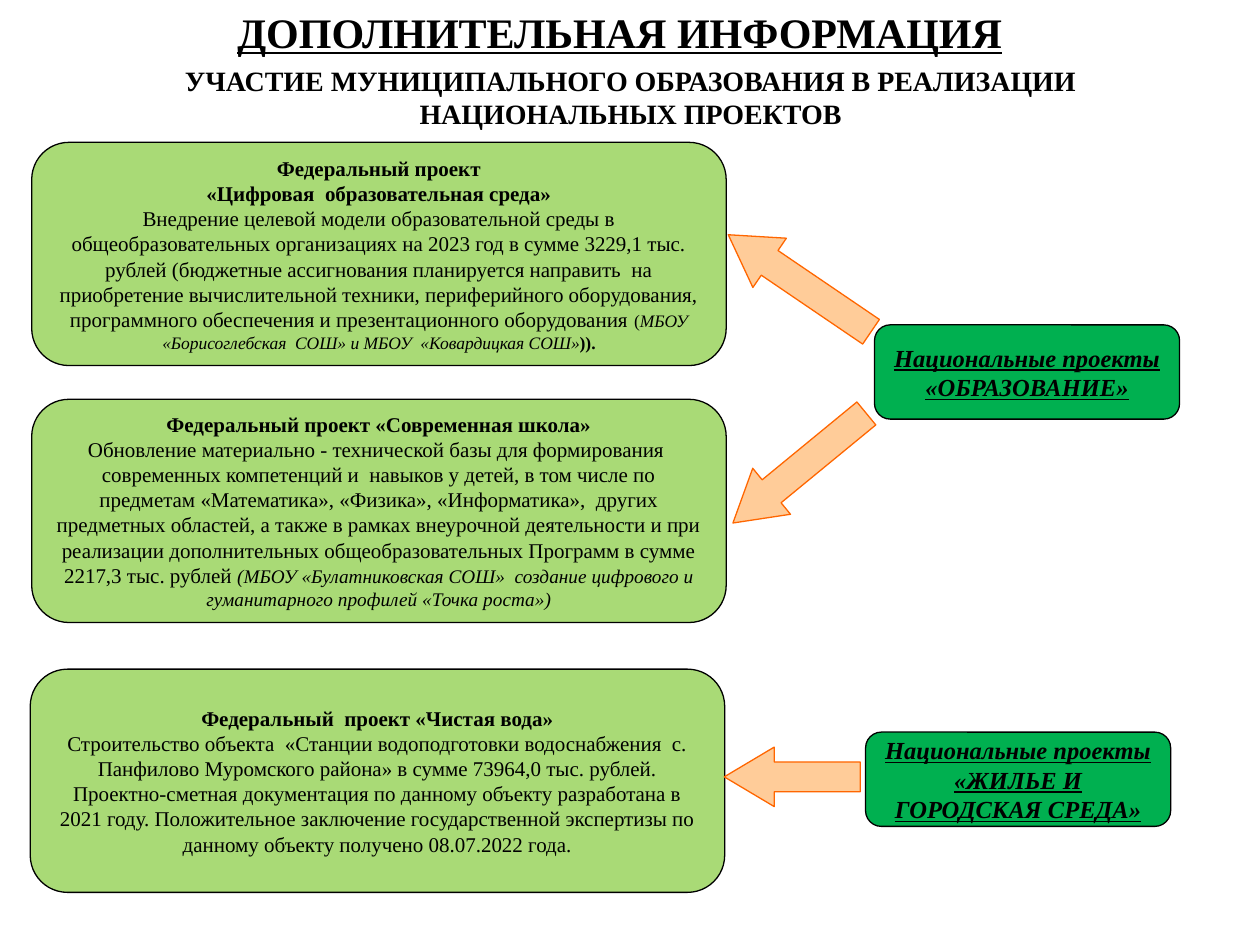
from lxml.etree import SubElement
from pptx import Presentation
from pptx.dml.color import RGBColor
from pptx.enum.shapes import MSO_SHAPE as Shape
from pptx.enum.text import MSO_ANCHOR as Anchor, MSO_AUTO_SIZE as AutoSize, PP_ALIGN as Align
from pptx.oxml.ns import qn
from pptx.util import Cm, Pt

FONT = "Times New Roman"

FEDERAL_PROJECTS = [
    (0.64, 2.87, [
        [("Федеральный проект", {"bold": True})],
        [("«Цифровая  образовательная среда»", {"bold": True})],
        [("Внедрение целевой модели образовательной среды в общеобразовательных "
          "организациях на 2023 год в сумме 3229,1 тыс. рублей (бюджетные ассигнования "
          "планируется направить  на приобретение вычислительной техники, периферийного "
          "оборудования, программного обеспечения и презентационного оборудования ", {}),
         ("(", {"size": 10}),
         ("МБОУ «Борисоглебская  СОШ» и МБОУ  «Ковардицкая СОШ»", {"size": 10, "italic": True}),
         (")).", {"size": 10, "bold": True})],
    ]),
    (0.64, 8.05, [
        [("Федеральный проект «Современная школа»", {"bold": True})],
        [("Обновление материально - технической базы для формирования  современных "
          "компетенций и  навыков у детей, в том числе по предметам «Математика», «Физика», "
          "«Информатика»,  других предметных областей, а также в рамках внеурочной "
          "деятельности и при реализации дополнительных общеобразовательных Программ "
          "в сумме 2217,3 тыс. рублей ", {}),
         ("(МБОУ «Булатниковская СОШ»  создание цифрового и гуманитарного профилей "
          "«Точка роста»)", {"size": 11, "italic": True})],
    ]),
    (0.61, 13.49, [
        [("Федеральный  проект «Чистая вода»", {"bold": True})],
        [("Строительство объекта  «Станции водоподготовки водоснабжения  с. Панфилово "
          "Муромского района» в сумме 73964,0 тыс. рублей. Проектно-сметная документация "
          "по данному объекту разработана в 2021 году. Положительное заключение "
          "государственной экспертизы по данному объекту получено 08.07.2022 года.", {})],
    ]),
]

NATIONAL_PROJECTS = [
    (17.63, 6.55, "«ОБРАЗОВАНИЕ»"),
    (17.45, 14.76, "«ЖИЛЬЕ И ГОРОДСКАЯ СРЕДА»"),
]

ARROWS = [
    (14.38, 5.11, 3.48, 214.2),
    (14.38, 8.84, 3.48, 140.6),
    (14.6, 15.06, 2.74, 180),
]


def color(value):
    """Turn a hex string into a colour."""
    return RGBColor.from_string(value)


def add_span(para, text, size=12, bold=False, italic=False, underline=False):
    """Append a formatted run to a paragraph."""
    span = para.add_run()
    span.text = text
    font = span.font
    font.name, font.size = FONT, Pt(size)
    font.bold, font.italic, font.underline = bold, italic, underline
    font.color.rgb = color("000000")


def write_text(box, paragraphs, anchor=Anchor.MIDDLE):
    """Fill a box with centred paragraphs of (text, format) spans."""
    frame = box.text_frame
    frame.word_wrap = True
    frame.auto_size = AutoSize.NONE
    frame.vertical_anchor = anchor
    for index, spans in enumerate(paragraphs):
        para = frame.paragraphs[0] if index == 0 else frame.add_paragraph()
        para.alignment = Align.CENTER
        for text, style in spans:
            add_span(para, text, **style)


def add_block(page, kind, left, top, width, height, fill, line="000000", opacity=100):
    """Add a filled and outlined preset shape."""
    block = page.shapes.add_shape(kind, Cm(left), Cm(top), Cm(width), Cm(height))
    block.shadow.inherit = False
    block.fill.solid()
    block.fill.fore_color.rgb = color(fill)
    block.line.color.rgb = color(line)
    block.line.width = Pt(0.75)
    if opacity < 100:
        shade = block.fill._xPr.find(qn("a:solidFill"))[0]
        SubElement(shade, qn("a:alpha")).set("val", str(opacity * 1000))
    return block


def add_heading(page):
    """Place the title and the subtitle."""
    title = page.shapes.title
    title.left, title.top, title.width, title.height = Cm(1.7), Cm(0), Cm(21.59), Cm(1.27)
    write_text(title, [[("ДОПОЛНИТЕЛЬНАЯ ИНФОРМАЦИЯ",
                         {"size": 24, "bold": True, "underline": True})]], Anchor.TOP)
    subtitle = page.shapes.add_textbox(Cm(1.07), Cm(1.37), Cm(23.29), Cm(1.17))
    write_text(subtitle, [[("УЧАСТИЕ МУНИЦИПАЛЬНОГО ОБРАЗОВАНИЯ В РЕАЛИЗАЦИИ "
                            "НАЦИОНАЛЬНЫХ ПРОЕКТОВ", {"size": 16, "bold": True})]])


def add_federal_project(page, left, top, paragraphs):
    """Add a light green card describing a federal project."""
    card = add_block(page, Shape.FLOWCHART_ALTERNATE_PROCESS, left, top, 14, 4.5,
                     "92D050", opacity=78)
    write_text(card, paragraphs)


def add_national_project(page, left, top, name):
    """Add a green label naming a group of national projects."""
    label = add_block(page, Shape.FLOWCHART_ALTERNATE_PROCESS, left, top, 6.15, 1.9, "00B050")
    style = {"size": 14, "bold": True, "italic": True, "underline": True}
    write_text(label, [[("Национальные проекты", style)], [(name, style)]])


def add_arrow(page, left, top, length, rotation):
    """Add a rotated block arrow."""
    arrow = add_block(page, Shape.RIGHT_ARROW, left, top, length, 1.2, "FFCC99", "FF6600")
    arrow.adjustments[0] = 0.5
    arrow.adjustments[1] = 0.84
    arrow.rotation = rotation


def main():
    """Build the slide and save the deck."""
    deck = Presentation()
    deck.slide_width, deck.slide_height = Cm(25.4), Cm(19.05)
    page = deck.slides.add_slide(deck.slide_layouts[5])
    add_heading(page)
    for project in FEDERAL_PROJECTS:
        add_federal_project(page, *project)
    for project in NATIONAL_PROJECTS:
        add_national_project(page, *project)
    for arrow in ARROWS:
        add_arrow(page, *arrow)
    deck.save("out.pptx")


if __name__ == "__main__":
    main()
